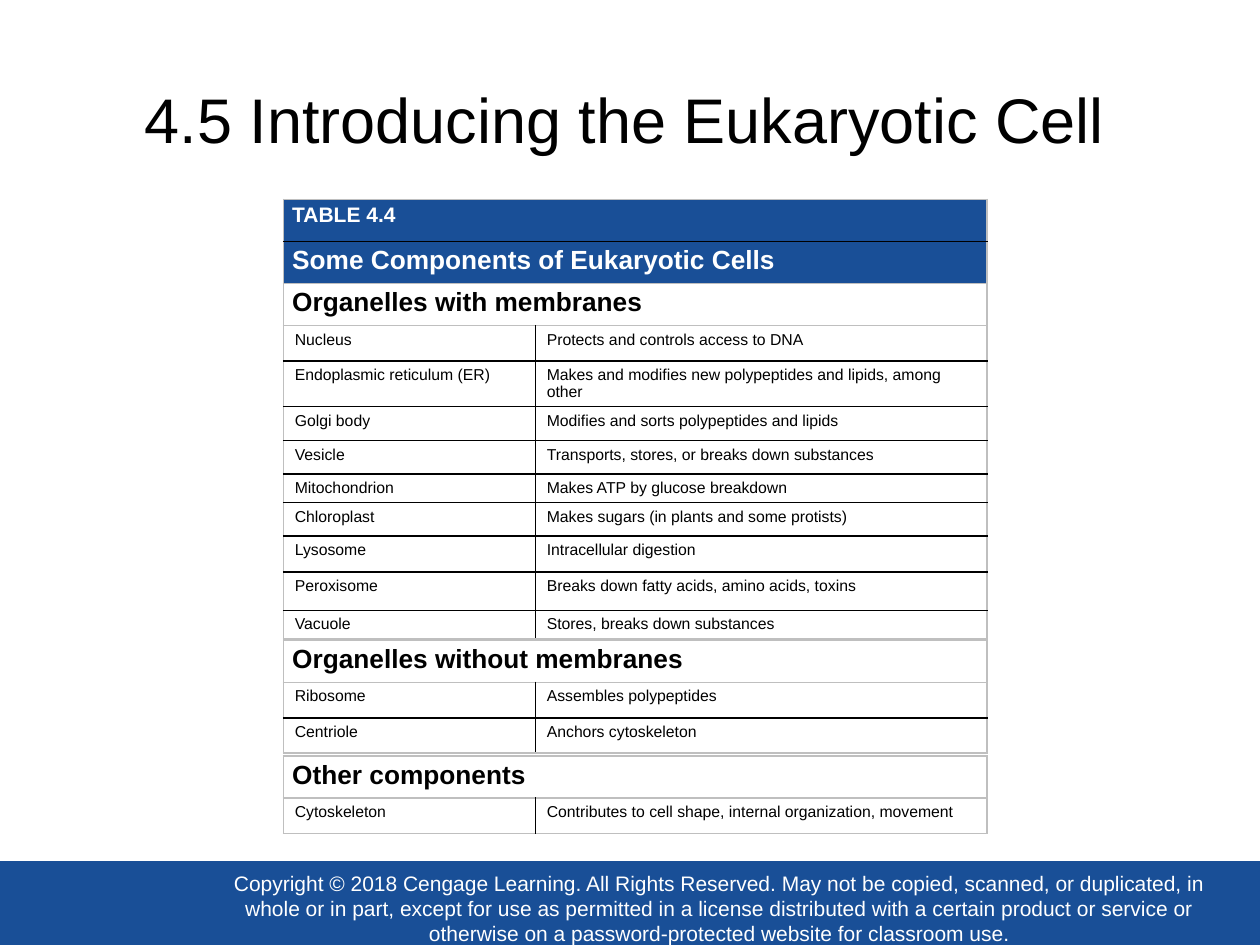
from lxml import etree
from pptx import Presentation
from pptx.dml.color import RGBColor
from pptx.enum import shapes, text
from pptx.oxml import ns
from pptx.util import Pt

BLUE, WHITE, BLACK, GREY = "194F97", "FFFFFF", "000000", "BFBFBF"


def style(p, size, color, bold=False):
    for r in p.runs:
        r.font.name = "Arial"
        r.font.size = Pt(size)
        r.font.bold = bold
        r.font.color.rgb = RGBColor.from_string(color)


def border(cell, side, color):
    ln = etree.SubElement(cell._tc.get_or_add_tcPr(), ns.qn("a:ln" + side), w=str(Pt(1)))
    fill = etree.SubElement(ln, ns.qn("a:solidFill"))
    etree.SubElement(fill, ns.qn("a:srgbClr"), val=color)


prs = Presentation()
prs.slide_width, prs.slide_height = Pt(720), Pt(540)
s = prs.slides.add_slide(prs.slide_layouts[5])

for x, y, w, h in [(-0.5, 492, 720.5, 48.5), (120.5, 498, 581.5, 42)]:
    sp = s.shapes.add_shape(shapes.MSO_SHAPE.RECTANGLE, Pt(x), Pt(y), Pt(w), Pt(h))
    sp.shadow.inherit = False
    sp.fill.solid()
    sp.fill.fore_color.rgb = RGBColor.from_string(BLUE)
    sp.line.fill.background()

tf = sp.text_frame
tf.word_wrap = True
tf.vertical_anchor = text.MSO_ANCHOR.MIDDLE
tf.margin_left = tf.margin_right = tf.margin_top = tf.margin_bottom = 0
tf.text = (
    "Copyright © 2018 Cengage Learning. All Rights Reserved. May not be copied, scanned, "
    "or duplicated, in whole or in part, except for use as permitted in a license "
    "distributed with a certain product or service or otherwise on a password-protected "
    "website for classroom use."
)
tf.paragraphs[0].alignment = text.PP_ALIGN.CENTER
style(tf.paragraphs[0], 12, WHITE)

title = s.shapes.title
title.left, title.top, title.width, title.height = Pt(41), Pt(28), Pt(632), Pt(79.5)
tf = title.text_frame
tf.text = "4.5 Introducing the Eukaryotic Cell"
tf.vertical_anchor = text.MSO_ANCHOR.MIDDLE
tf.paragraphs[0].alignment = text.PP_ALIGN.CENTER
style(tf.paragraphs[0], 36, BLACK)

tables = [
    (114, [(24, "TABLE 4.4"), (24, "Some Components of Eukaryotic Cells")]),
    (162, [(24, "Organelles with membranes")]),
    (186, [
        (20.2, "Nucleus", "Protects and controls access to DNA"),
        (20.2, "Endoplasmic reticulum (ER)",
         "Makes and modifies new polypeptides and lipids, among other"),
        (19.4, "Golgi body", "Modifies and sorts polypeptides and lipids"),
        (19, "Vesicle", "Transports, stores, or breaks down substances"),
        (16.5, "Mitochondrion", "Makes ATP by glucose breakdown"),
        (19, "Chloroplast", "Makes sugars (in plants and some protists)"),
        (20.7, "Lysosome", "Intracellular digestion"),
        (21.8, "Peroxisome", "Breaks down fatty acids, amino acids, toxins"),
        (16.5, "Vacuole", "Stores, breaks down substances"),
    ]),
    (366, [(24, "Organelles without membranes")]),
    (390, [
        (20.2, "Ribosome", "Assembles polypeptides"),
        (20.2, "Centriole", "Anchors cytoskeleton"),
    ]),
    (432, [(24, "Other components")]),
    (456, [
        (20.2, "Cytoskeleton", "Contributes to cell shape, internal organization, movement"),
    ]),
]

for top, rows in tables:
    widths = [144, 258] if len(rows[0]) == 3 else [402]
    height = sum(row[0] for row in rows)
    frame = s.shapes.add_table(len(rows), len(widths), Pt(162), Pt(top), Pt(402), Pt(height))
    tbl = frame.table
    tbl.first_row = tbl.horz_banding = False
    for column, width in zip(tbl.columns, widths):
        column.width = Pt(width)
    heading = len(widths) == 1
    banner = top == tables[0][0]
    for i, (row_height, *words) in enumerate(rows):
        tbl.rows[i].height = Pt(row_height)
        for j, word in enumerate(words):
            cell = tbl.cell(i, j)
            cell.text = word
            cell.margin_left = cell.margin_right = Pt(5 if heading else 6.5)
            cell.margin_top = cell.margin_bottom = Pt(2.5 if heading else 3)
            size = (12 if i == 0 else 15) if banner else 15 if heading else 9
            style(cell.text_frame.paragraphs[0], size, WHITE if banner else BLACK, heading)
            edges = {"L": j == 0, "R": j == len(words) - 1,
                     "T": i == 0, "B": i == len(rows) - 1}
            for side, outer in edges.items():
                border(cell, side, GREY if outer else BLACK)
            if banner:
                cell.fill.solid()
                cell.fill.fore_color.rgb = RGBColor.from_string(BLUE)
            else:
                cell.fill.background()

prs.save("out.pptx")
